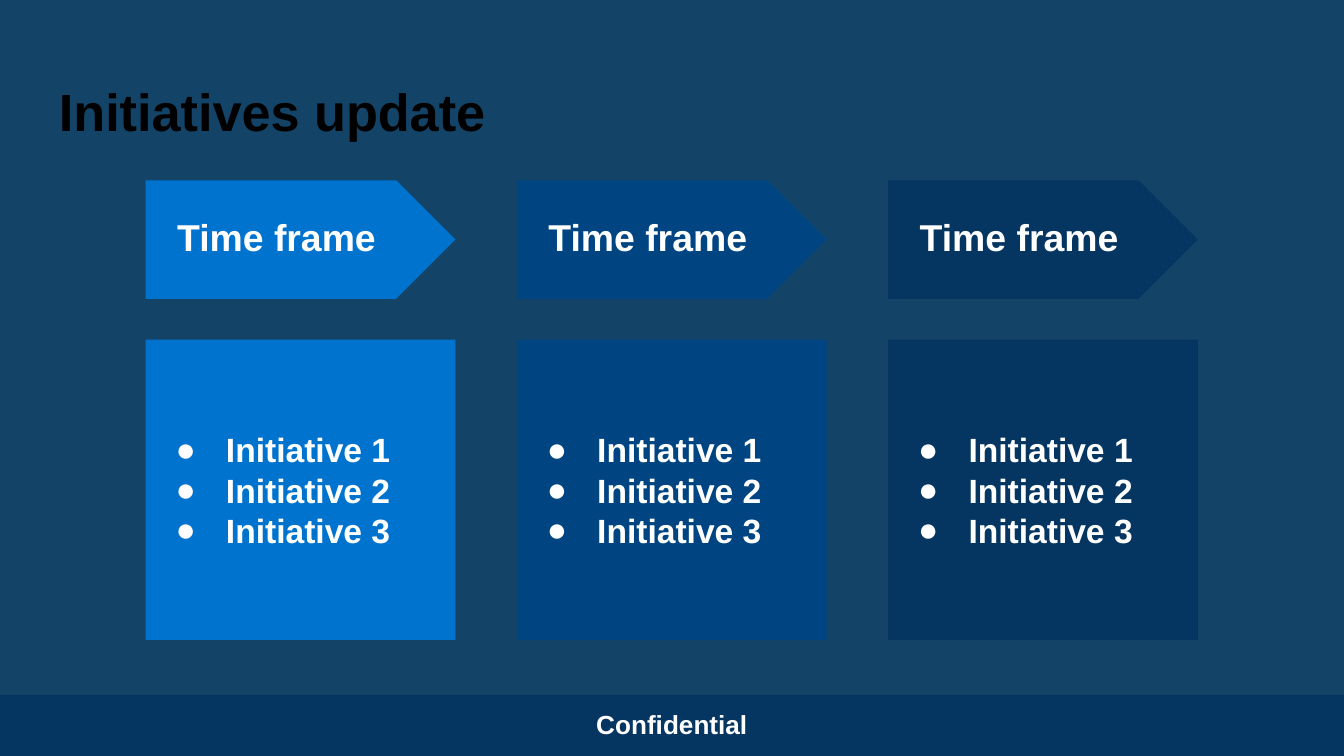
from dataclasses import dataclass

from lxml.etree import SubElement
from pptx import Presentation
from pptx.dml.color import RGBColor
from pptx.enum.shapes import MSO_SHAPE as Preset
from pptx.enum.text import MSO_ANCHOR as Anchor, PP_ALIGN as Align
from pptx.oxml.ns import qn
from pptx.shapes.autoshape import Shape
from pptx.slide import Slide
from pptx.util import Pt

COLORS = {
    "background": "134467",
    "title": "000000",
    "text": "FFFFFF",
    "bright": "0073CF",
    "medium": "004582",
    "dark": "053561",
}
FONT = "Arial"
INITIATIVES = ("Initiative 1", "Initiative 2", "Initiative 3")
FIRST_LEFT, COLUMN_STEP, COLUMN_WIDTH = 78, 198.9, 166


@dataclass(frozen=True)
class Box:
    left: float
    top: float
    width: float
    height: float

    def lengths(self) -> tuple[Pt, Pt, Pt, Pt]:
        return Pt(self.left), Pt(self.top), Pt(self.width), Pt(self.height)


@dataclass(frozen=True)
class Phase:
    heading: str
    initiatives: tuple[str, ...]
    color: str


PHASES = [Phase("Time frame", INITIATIVES, color) for color in ("bright", "medium", "dark")]


def write(holder: Shape, lines: tuple[str, ...], size: float, color: str = "text",
          align: Align = Align.LEFT, anchor: Anchor = Anchor.TOP, bulleted: bool = False) -> None:
    frame = holder.text_frame
    frame.word_wrap = True
    frame.vertical_anchor = anchor
    frame.margin_left = frame.margin_right = frame.margin_top = frame.margin_bottom = Pt(7.2)
    for index, line in enumerate(lines):
        paragraph = frame.add_paragraph() if index else frame.paragraphs[0]
        paragraph.alignment = align
        run = paragraph.add_run()
        run.text = line
        run.font.name = FONT
        run.font.size = Pt(size)
        run.font.bold = True
        run.font.color.rgb = RGBColor.from_string(COLORS[color])
        if bulleted:
            properties = paragraph._p.get_or_add_pPr()
            properties.set("marL", str(Pt(36)))
            properties.set("indent", str(-Pt(27)))
            bullet_color = SubElement(properties, qn("a:buClr"))
            SubElement(bullet_color, qn("a:srgbClr"), val=COLORS[color])
            SubElement(properties, qn("a:buFont"), typeface=FONT)
            SubElement(properties, qn("a:buChar"), char="●")


def add_panel(slide: Slide, preset: Preset, box: Box, color: str) -> Shape:
    panel = slide.shapes.add_shape(preset, *box.lengths())
    panel.shadow.inherit = False
    panel.fill.solid()
    panel.fill.fore_color.rgb = RGBColor.from_string(COLORS[color])
    panel.line.fill.background()
    return panel


def add_label(slide: Slide, box: Box, text: str, size: float, color: str = "text") -> None:
    write(slide.shapes.add_textbox(*box.lengths()), (text,), size, color)


def add_phase(slide: Slide, phase: Phase, left: float) -> None:
    add_panel(slide, Preset.PENTAGON, Box(left, 96.6, COLUMN_WIDTH, 63.5), phase.color)
    add_label(slide, Box(left + 9.8, 107.3, 137, 34.6), phase.heading, 20)
    initiatives = add_panel(slide, Preset.RECTANGLE, Box(left, 182, COLUMN_WIDTH, 160.8), phase.color)
    write(initiatives, phase.initiatives, 18, anchor=Anchor.MIDDLE, bulleted=True)


def main() -> None:
    presentation = Presentation()
    presentation.slide_width, presentation.slide_height = Pt(720), Pt(405)
    slide = presentation.slides.add_slide(presentation.slide_layouts[6])
    slide.background.fill.solid()
    slide.background.fill.fore_color.rgb = RGBColor.from_string(COLORS["background"])

    add_label(slide, Box(24.5, 35.3, 671, 45.4), "Initiatives update", 28, "title")
    for index, phase in enumerate(PHASES):
        add_phase(slide, phase, FIRST_LEFT + index * COLUMN_STEP)
    footer = add_panel(slide, Preset.RECTANGLE, Box(0, 372.4, 720, 32.6), "dark")
    write(footer, ("Confidential",), 14, align=Align.CENTER)

    presentation.save("out.pptx")


if __name__ == "__main__":
    main()
